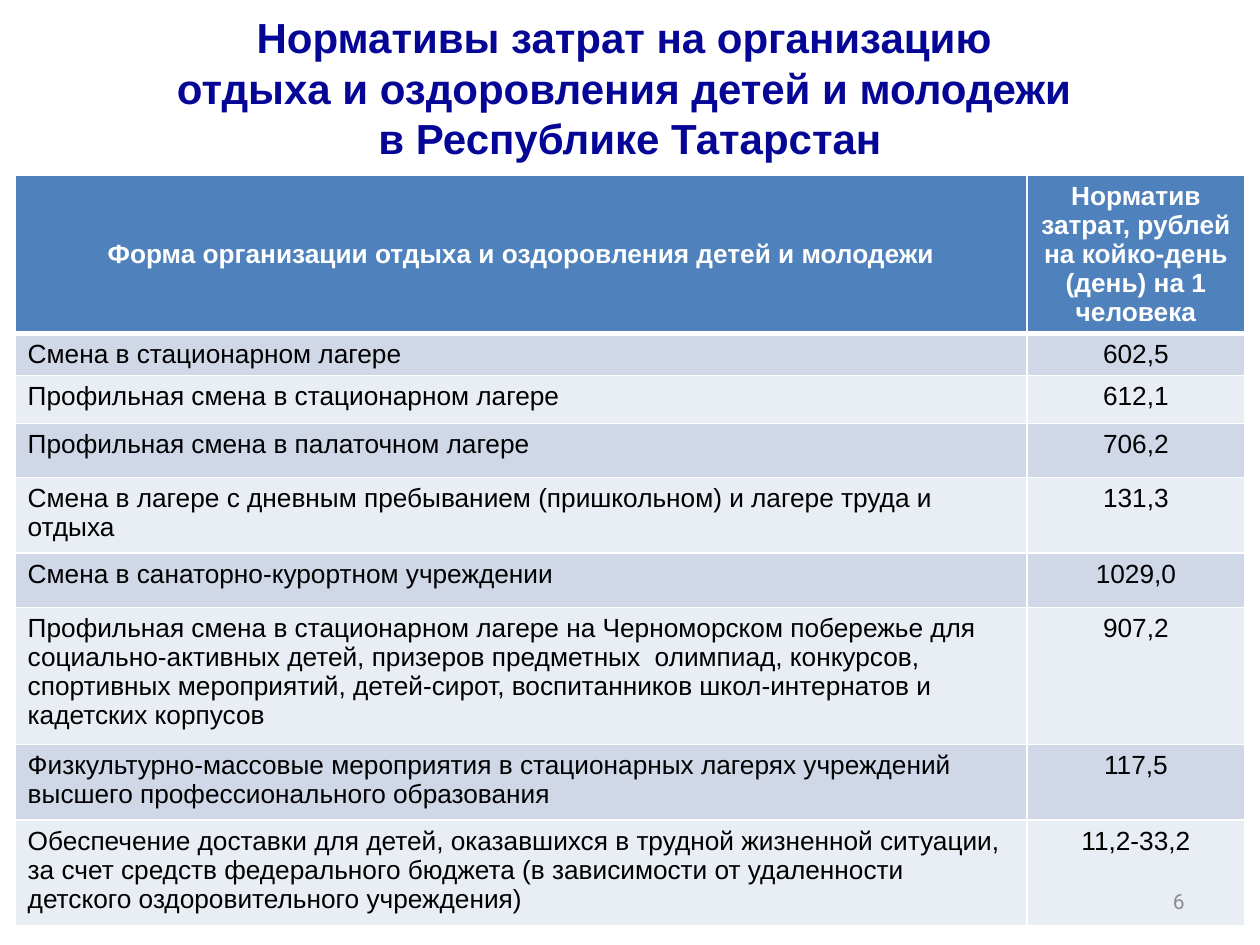
"""Build the slide with the cost norms for children's and youth recreation."""
from lxml import etree
from pptx import Presentation
from pptx.dml.color import RGBColor
from pptx.enum import text
from pptx.oxml.ns import qn
from pptx.util import Inches, Pt

NAVY = RGBColor(0x06, 0x06, 0x96)
BLUE = RGBColor(0x4F, 0x81, 0xBD)
BAND_DARK = RGBColor(0xD0, 0xD8, 0xE8)
BAND_LIGHT = RGBColor(0xE9, 0xED, 0xF4)
WHITE = RGBColor(0xFF, 0xFF, 0xFF)
BLACK = RGBColor(0, 0, 0)
GRAY = RGBColor(0x8C, 0x8C, 0x8C)

TITLE = ("Нормативы затрат на организацию \v"
         "отдыха и оздоровления детей и молодежи \v"
         "в Республике Татарстан")
ROWS = [
    ("Форма организации отдыха и оздоровления детей и молодежи",
     "Норматив затрат, рублей на койко-день (день) на 1 человека", 1.09),
    ("Смена в стационарном лагере", "602,5", 0.33),
    ("Профильная смена в стационарном лагере", "612,1", 0.38),
    ("Профильная смена в палаточном лагере", "706,2", 0.43),
    ("Смена в лагере с дневным пребыванием (пришкольном) и лагере труда и отдыха",
     "131,3", 0.6),
    ("Смена в санаторно-курортном учреждении", "1029,0", 0.43),
    ("Профильная смена в стационарном лагере на Черноморском побережье для "
     "социально-активных детей, призеров предметных  олимпиад, конкурсов, "
     "спортивных мероприятий, детей-сирот, воспитанников школ-интернатов и "
     "кадетских корпусов", "907,2", 1.09),
    ("Физкультурно-массовые мероприятия в стационарных лагерях учреждений "
     "высшего профессионального образования", "117,5", 0.6),
    ("Обеспечение доставки для детей, оказавшихся в трудной жизненной ситуации, "
     "за счет средств федерального бюджета (в зависимости от удаленности "
     "детского оздоровительного учреждения)", "11,2-33,2", 0.84),
]
COLUMNS = (8.03, 1.73)


def format_text(tf, size, color, align, bold=False, font="Arial"):
    """Format every run of a text frame."""
    for p in tf.paragraphs:
        p.alignment = align
        for r in p.runs:
            r.font.size = Pt(size)
            r.font.name = font
            r.font.bold = bold
            r.font.color.rgb = color


def set_borders(cell, top, bottom):
    """Give a cell white borders of the given widths in points."""
    tc_pr = cell._tc.get_or_add_tcPr()
    widths = (("L", 1), ("R", 1), ("T", top), ("B", bottom))
    for i, (side, width) in enumerate(widths):
        ln = etree.Element(qn(f"a:ln{side}"), w=str(Pt(width)))
        fill = etree.SubElement(ln, qn("a:solidFill"))
        etree.SubElement(fill, qn("a:srgbClr"), val=str(WHITE))
        tc_pr.insert(i, ln)


def add_title(s):
    """Fill and place the title placeholder."""
    sp = s.shapes.title
    sp.left, sp.top, sp.width, sp.height = 0, 0, Inches(10), Inches(1.39)
    tf = sp.text_frame
    tf.text = TITLE
    tf.vertical_anchor = text.MSO_ANCHOR.MIDDLE
    format_text(tf, 24, NAVY, text.PP_ALIGN.CENTER, bold=True)
    for br in tf.paragraphs[0]._p.findall(qn("a:br")):
        etree.SubElement(br, qn("a:rPr"), sz="2400")


def add_norms_table(s):
    """Add the table of cost norms."""
    table = s.shapes.add_table(len(ROWS), len(COLUMNS), Inches(0.12), Inches(1.39),
                               Inches(sum(COLUMNS)), Inches(6.08)).table
    for column, width in zip(table.columns, COLUMNS):
        column.width = Inches(width)
    for i, (form, norm, height) in enumerate(ROWS):
        header = i == 0
        table.rows[i].height = Inches(height)
        for j, value in enumerate((form, norm)):
            cell = table.cell(i, j)
            cell.text = value
            centered = header or j == 1
            align = text.PP_ALIGN.CENTER if centered else text.PP_ALIGN.LEFT
            format_text(cell.text_frame, 15, WHITE if header else BLACK, align, header)
            if header:
                cell.vertical_anchor = text.MSO_ANCHOR.MIDDLE
            cell.fill.solid()
            band = BAND_DARK if i % 2 else BAND_LIGHT
            cell.fill.fore_color.rgb = BLUE if header else band
            set_borders(cell, top=3 if i == 1 else 1, bottom=3 if header else 1)


def add_page_number(s):
    """Add the page number at the lower right."""
    tf = s.shapes.add_textbox(Inches(7.17), Inches(6.95),
                              Inches(2.33), Inches(0.4)).text_frame
    tf.word_wrap = True
    tf.vertical_anchor = text.MSO_ANCHOR.MIDDLE
    tf.text = "6"
    format_text(tf, 12, GRAY, text.PP_ALIGN.RIGHT, font="Roboto")


def main():
    """Build and save the presentation."""
    prs = Presentation()
    prs.slide_width, prs.slide_height = Inches(10), Inches(7.5)
    s = prs.slides.add_slide(prs.slide_layouts[5])
    add_title(s)
    add_norms_table(s)
    add_page_number(s)
    prs.save("out.pptx")


if __name__ == "__main__":
    main()
